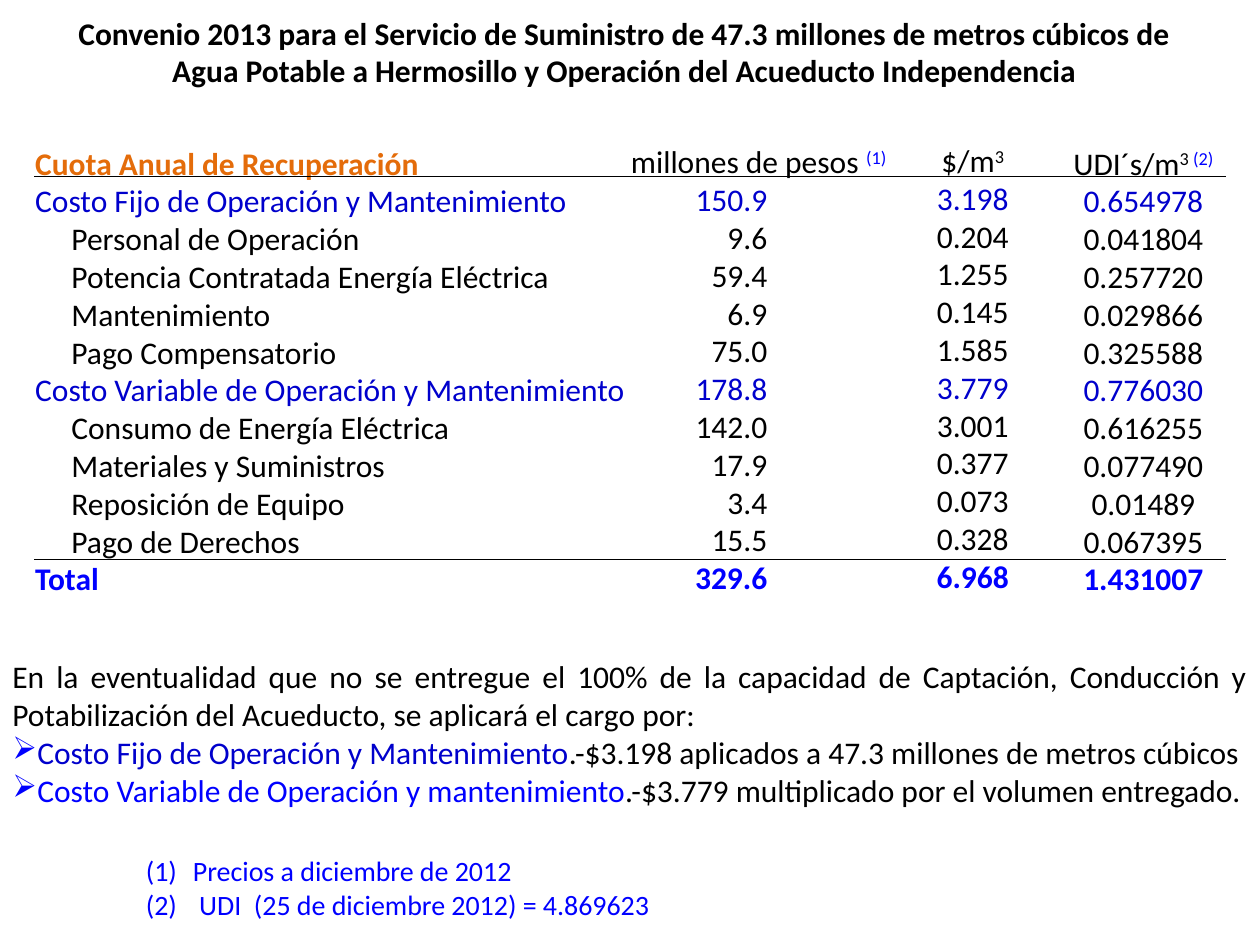
from lxml.etree import SubElement
from pptx import Presentation
from pptx.dml.color import RGBColor
from pptx.enum.shapes import MSO_CONNECTOR as Connector
from pptx.enum.text import MSO_AUTO_SIZE as AutoSize, PP_ALIGN as Align
from pptx.oxml.ns import qn
from pptx.util import Cm, Pt

BLACK = RGBColor(0x00, 0x00, 0x00)
ORANGE = RGBColor(0xE4, 0x6C, 0x0A)
NAVY = RGBColor(0x00, 0x00, 0xCC)
BLUE = RGBColor(0x00, 0x00, 0xFF)

COSTS = [
    ("Costo Fijo de Operación y Mantenimiento", "150.9", "3.198", "0.654978"),
    ("Personal de Operación", "9.6", "0.204", "0.041804"),
    ("Potencia Contratada Energía Eléctrica", "59.4", "1.255", "0.257720"),
    ("Mantenimiento", "6.9", "0.145", "0.029866"),
    ("Pago Compensatorio", "75.0", "1.585", "0.325588"),
    ("Costo Variable de Operación y Mantenimiento", "178.8", "3.779", "0.776030"),
    ("Consumo de Energía Eléctrica", "142.0", "3.001", "0.616255"),
    ("Materiales y Suministros", "17.9", "0.377", "0.077490"),
    ("Reposición de Equipo", "3.4", "0.073", "0.01489"),
    ("Pago de Derechos", "15.5", "0.328", "0.067395"),
    ("Total", "329.6", "6.968", "1.431007"),
]
GROUPS = (0, 5)
TOTAL = len(COSTS) - 1


class CostSlide:
    """Hold the text style and the slide being filled."""

    font = "Calibri"

    def __init__(self, deck):
        self.slide = deck.slides.add_slide(deck.slide_layouts[6])

    def text(self, left, top, width, height, wrap=True):
        box = self.slide.shapes.add_textbox(Cm(left), Cm(top), Cm(width), Cm(height))
        frame = box.text_frame
        frame.word_wrap = wrap
        frame.auto_size = AutoSize.SHAPE_TO_FIT_TEXT
        return frame

    def paragraph(self, frame, runs, align=Align.LEFT, size=18):
        first = frame.paragraphs[0]
        paragraph = first if not first.runs else frame.add_paragraph()
        paragraph.alignment = align
        for words, color, *styles in runs:
            run = paragraph.add_run()
            run.text = words
            run.font.name = self.font
            run.font.size = Pt(size)
            run.font.color.rgb = color
            run.font.bold = "bold" in styles
            if "super" in styles:
                run._r.get_or_add_rPr().set("baseline", "30000")
        return paragraph

    def indent(self, paragraph, margin, first=0):
        properties = paragraph._p.get_or_add_pPr()
        properties.set("marL", str(Cm(margin)))
        properties.set("indent", str(Cm(first)))

    def arrow_bullet(self, paragraph):
        properties = paragraph._p.get_or_add_pPr()
        color = SubElement(properties, qn("a:buClr"))
        SubElement(color, qn("a:srgbClr"), val=str(BLUE))
        SubElement(properties, qn("a:buChar"), char="➢")

    def number(self, paragraph):
        self.indent(paragraph, 0.95, -0.95)
        SubElement(paragraph._p.get_or_add_pPr(), qn("a:buAutoNum"), type="arabicParenBoth")

    def column(self, frame, index, align, header=None):
        if header:
            self.paragraph(frame, header, align)
        for row, cost in enumerate(COSTS):
            if row == TOTAL:
                style = (BLUE, "bold")
            else:
                style = (NAVY,) if row in GROUPS else (BLACK,)
            paragraph = self.paragraph(frame, [(cost[index], *style)], align)
            if index == 0 and style == (BLACK,):
                self.indent(paragraph, 0.73)

    def rule(self, top):
        line = self.slide.shapes.add_connector(
            Connector.STRAIGHT, Cm(24.71), Cm(top), Cm(0.69), Cm(top))
        line.line.color.rgb = BLACK
        line.line.width = Pt(1)
        SubElement(line._element.spPr, qn("a:effectLst"))


def main():
    deck = Presentation()
    deck.slide_width, deck.slide_height = Cm(25.4), Cm(19.05)
    page = CostSlide(deck)

    page.column(page.text(0.46, 2.77, 14.33, 9.5), 0, Align.LEFT,
                [("Cuota Anual de Recuperación", ORANGE, "bold")])
    page.column(page.text(13.74, 3.51, 1.98, 8.71, wrap=False), 1, Align.RIGHT)
    page.column(page.text(18.62, 2.72, 1.98, 9.5, wrap=False), 2, Align.CENTER,
                [("$/m", BLACK), ("3", BLACK, "super")])
    page.rule(11.28)

    charges = page.text(0, 13.13, 25.4, 3.33)
    page.paragraph(charges, [(
        "En la eventualidad que no se entregue el 100% de la capacidad de Captación, "
        "Conducción y Potabilización del Acueducto, se aplicará el cargo por: ", BLACK)],
        Align.JUSTIFY)
    for concept, color, charge in (
        ("Costo Fijo de Operación y Mantenimiento", NAVY,
         ".-$3.198 aplicados a 47.3 millones de metros cúbicos"),
        ("Costo Variable de Operación y mantenimiento", BLUE,
         ".-$3.779 multiplicado por el volumen entregado."),
    ):
        page.arrow_bullet(page.paragraph(
            charges, [(concept, color), (charge, BLACK)], Align.JUSTIFY))

    page.paragraph(page.text(0.69, 0.15, 23.8, 1.8), [(
        "Convenio 2013 para el Servicio de Suministro de 47.3 millones de metros cúbicos "
        "de Agua Potable a Hermosillo y Operación del Acueducto Independencia",
        BLACK, "bold")], Align.CENTER)
    page.column(page.text(21.21, 2.77, 3.68, 9.5, wrap=False), 3, Align.CENTER,
                [("UDI´s/m", BLACK), ("3 ", BLACK, "super"), ("(2)", BLUE, "super")])
    page.rule(3.56)

    footnotes = page.text(2.69, 17.09, 10.8, 1.63, wrap=False)
    for note in ("Precios a diciembre de 2012", " UDI  (25 de diciembre 2012) = 4.869623"):
        page.number(page.paragraph(footnotes, [(note, BLUE)], size=16))

    page.paragraph(page.text(12.4, 2.74, 5.79, 1.02, wrap=False),
                   [("millones de pesos ", BLACK), ("(1)", BLUE, "super")], Align.CENTER)
    deck.save("out.pptx")


if __name__ == "__main__":
    main()
